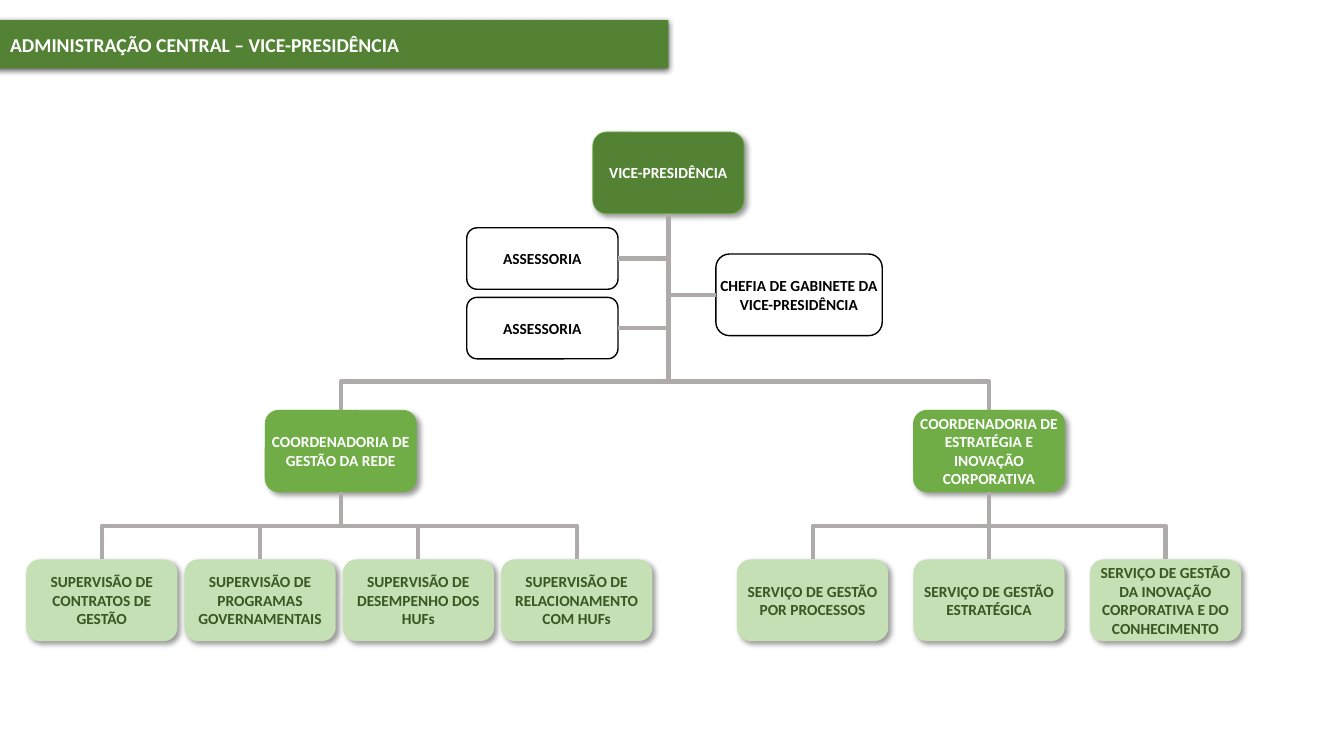
from lxml.etree import SubElement
from pptx import Presentation
from pptx.dml.color import RGBColor
from pptx.enum.shapes import MSO_CONNECTOR as CONNECTOR, MSO_SHAPE as SHAPE
from pptx.enum.text import MSO_ANCHOR as ANCHOR, MSO_AUTO_SIZE as AUTO_SIZE, PP_ALIGN as ALIGN
from pptx.oxml.ns import qn
from pptx.util import Pt

PX = 9144
FONT = "Calibri"
COLORS = {
    "dark": "548235",
    "mid": "70AD47",
    "light": "C5E0B4",
    "ink": "385723",
    "white": "FFFFFF",
    "black": "000000",
    "link": "AFABAB",
}
STYLES = {
    "head": ("dark", "white", "mid", 0.5),
    "unit": ("mid", "white", "mid", 0.5),
    "team": ("light", "ink", None, 0),
    "staff": ("white", "black", "black", 1),
}
TOP, LEFT, BOTTOM, RIGHT = range(4)


class OrgChart:
    def __init__(self, deck):
        self.slide = deck.slides.add_slide(deck.slide_layouts[5])

    def color(self, name):
        return RGBColor.from_string(COLORS[name])

    def paint(self, shape, fill, line, width):
        shape.fill.solid()
        shape.fill.fore_color.rgb = self.color(fill)
        if line:
            shape.line.color.rgb = self.color(line)
            shape.line.width = Pt(width)
        else:
            shape.line.fill.background()
        shape.shadow.inherit = False

    def shade(self, shape, alpha, blur, distance, angle):
        effects = shape.element.spPr.find(qn("a:effectLst"))
        shadow = SubElement(effects, qn("a:outerShdw"), blurRad=str(Pt(blur)),
                            dist=str(Pt(distance)), dir=str(angle * 60000),
                            algn="tl", rotWithShape="0")
        black = SubElement(shadow, qn("a:srgbClr"), val=COLORS["black"])
        SubElement(black, qn("a:alpha"), val=str(alpha * 1000))

    def label(self, shape, text, size, color, align, inset):
        frame = shape.text_frame
        frame.word_wrap = True
        frame.auto_size = AUTO_SIZE.NONE
        frame.vertical_anchor = ANCHOR.MIDDLE
        frame.margin_left = inset * PX
        frame.margin_right = frame.margin_top = frame.margin_bottom = 0
        for index, line in enumerate(text.split("\n")):
            paragraph = frame.add_paragraph() if index else frame.paragraphs[0]
            paragraph.alignment = align
            run = paragraph.add_run()
            run.text = line
            run.font.name = FONT
            run.font.size = Pt(size)
            run.font.bold = True
            run.font.color.rgb = self.color(color)

    def banner(self, text, x, y, w, h):
        title = self.slide.shapes.title
        title.left, title.top, title.width, title.height = (v * PX for v in (x, y, w, h))
        outline = SubElement(title.element.spPr, qn("a:prstGeom"), prst="roundRect")
        SubElement(outline, qn("a:avLst"))
        self.paint(title, "dark", None, 0)
        self.shade(title, 63, 4.5, 1.5, 90)
        self.label(title, text, 14, "white", ALIGN.LEFT, 34)

    def box(self, style, text, x, y, w=150, h=81):
        fill, ink, line, width = STYLES[style]
        shape = self.slide.shapes.add_shape(
            SHAPE.ROUNDED_RECTANGLE, x * PX, y * PX, w * PX, h * PX)
        self.paint(shape, fill, line, width)
        if style != "staff":
            self.shade(shape, 40, 4, 3, 45)
        self.label(shape, text, 11, ink, ALIGN.CENTER, 0)
        return shape

    def link(self, parent, child, side=TOP, bend=50000):
        x1, y1 = parent.left + parent.width // 2, parent.top + parent.height
        x2, y2 = {
            TOP: (child.left + child.width // 2, child.top),
            LEFT: (child.left, child.top + child.height // 2),
            RIGHT: (child.left + child.width, child.top + child.height // 2),
        }[side]
        drop, reach = y2 - y1, abs(x2 - x1)
        elbow = self.slide.shapes.add_connector(CONNECTOR.ELBOW, x1, y1, x2, y2)
        elbow.begin_connect(parent, BOTTOM)
        elbow.end_connect(child, side)
        elbow.left, elbow.top = (x1 + x2 - drop) // 2, (y1 + y2 - reach) // 2
        elbow.width, elbow.height = drop, reach
        rightward = x2 > x1
        frame = elbow.element.spPr.find(qn("a:xfrm"))
        frame.set("rot", "16200000" if rightward else "5400000")
        frame.set("flipH", "1" if rightward else "0")
        frame.set("flipV", "0")
        outline = elbow.element.spPr.find(qn("a:prstGeom"))
        if side == TOP:
            SubElement(outline.find(qn("a:avLst")), qn("a:gd"), name="adj1", fmla=f"val {bend}")
        else:
            outline.set("prst", "bentConnector2")
        elbow.line.color.rgb = self.color("link")
        elbow.line.width = Pt(3)
        SubElement(elbow.element.spPr, qn("a:effectLst"))


def main():
    deck = Presentation()
    deck.slide_width, deck.slide_height = 1333 * PX, 750 * PX
    chart = OrgChart(deck)
    chart.banner("ADMINISTRAÇÃO CENTRAL – VICE-PRESIDÊNCIA", -24, 20, 687, 48)

    vice_presidency = chart.box("head", "VICE-PRESIDÊNCIA", 588, 131)
    for y in (226, 295):
        advisory = chart.box("staff", "ASSESSORIA", 463, y, h=61)
        chart.link(vice_presidency, advisory, RIGHT)
    cabinet = chart.box("staff", "CHEFIA DE GABINETE DA VICE-PRESIDÊNCIA", 710, 252, w=165)
    chart.link(vice_presidency, cabinet, LEFT)

    coordinations = [
        ("COORDENADORIA DE GESTÃO DA REDE", 263, 26, 157, [
            "SUPERVISÃO DE CONTRATOS DE GESTÃO",
            "SUPERVISÃO DE PROGRAMAS GOVERNAMENTAIS",
            "SUPERVISÃO DE DESEMPENHO DOS HUFs",
            "SUPERVISÃO DE RELACIONAMENTO COM HUFs",
        ]),
        ("COORDENADORIA DE ESTRATÉGIA E INOVAÇÃO CORPORATIVA", 906, 731, 175, [
            "SERVIÇO DE GESTÃO POR PROCESSOS",
            "SERVIÇO DE GESTÃO\nESTRATÉGICA",
            "SERVIÇO DE GESTÃO DA INOVAÇÃO CORPORATIVA E DO CONHECIMENTO",
        ]),
    ]
    for name, x, first_x, step, teams in coordinations:
        coordination = chart.box("unit", name, x, 407)
        chart.link(vice_presidency, coordination, bend=85400)
        for index, team_name in enumerate(teams):
            team = chart.box("team", team_name, first_x + index * step, 555)
            chart.link(coordination, team)

    deck.save("out.pptx")


if __name__ == "__main__":
    main()
